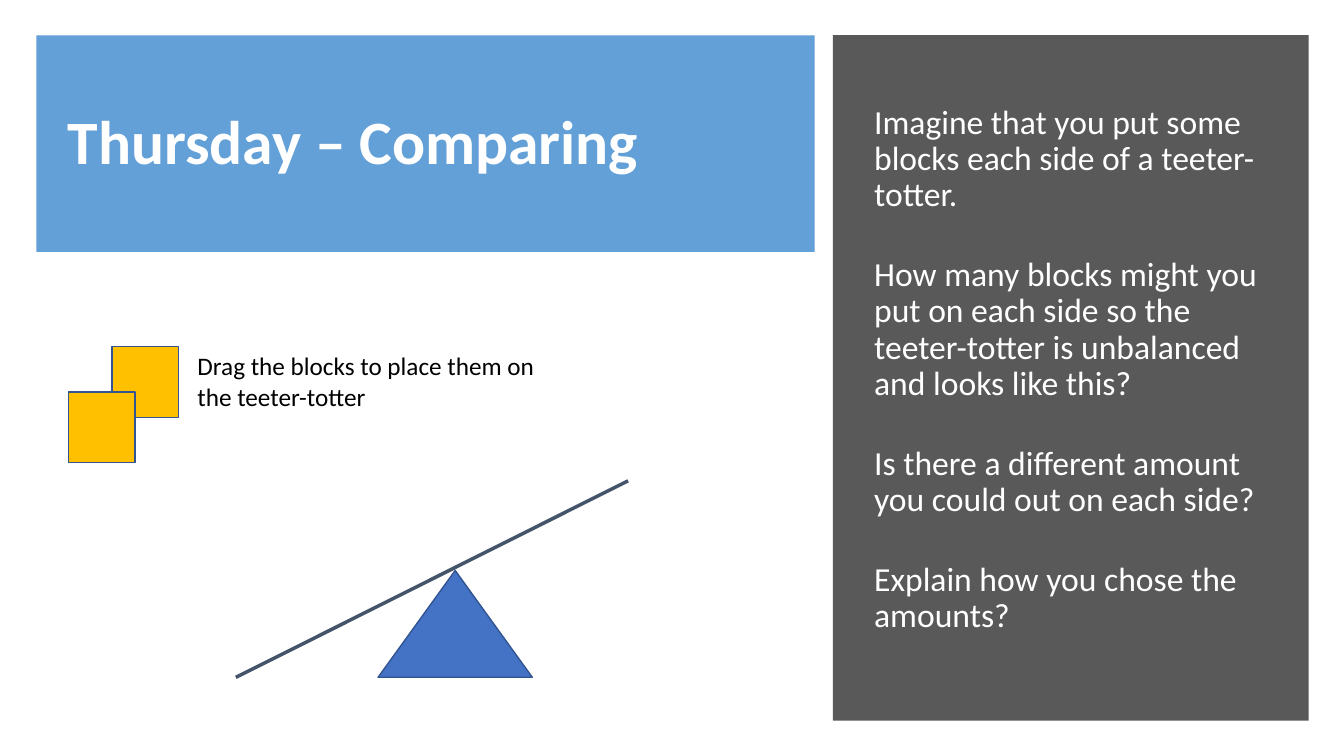
from lxml.etree import SubElement
from pptx import Presentation
from pptx.dml.color import RGBColor
from pptx.enum.shapes import MSO_CONNECTOR, MSO_SHAPE
from pptx.enum.text import MSO_ANCHOR, MSO_AUTO_SIZE, PP_ALIGN
from pptx.oxml.ns import qn
from pptx.util import Inches, Pt

COLOURS = {
    "banner": "5B9BD5",
    "panel": "595959",
    "block": "FFC000",
    "pivot": "4472C4",
    "outline": "325491",
    "beam": "44546A",
    "light": "FFFFFF",
    "dark": "000000",
}
QUESTIONS = [
    "Imagine that you put some blocks each side of a teeter-totter.",
    "How many blocks might you put on each side so the teeter-totter is unbalanced and looks like this?",
    "Is there a different amount you could out on each side?",
    "Explain how you chose the amounts?",
]
INSTRUCTION = "Drag the blocks to place them on the teeter-totter"


def add_filled_shape(kind, box, fill, outline=None):
    shape = slide.shapes.add_shape(kind, *map(Inches, box))
    shape.shadow.inherit = False
    shape.fill.solid()
    shape.fill.fore_color.rgb = RGBColor.from_string(COLOURS[fill])
    if outline:
        shape.line.color.rgb = RGBColor.from_string(COLOURS[outline])
        shape.line.width = Pt(1)
    else:
        shape.line.fill.background()
    return shape


def write_text(shape, box, lines, frame_format, paragraph_format, font_format, colour):
    shape.left, shape.top, shape.width, shape.height = map(Inches, box)
    frame = shape.text_frame
    frame.text = "\n".join(lines)
    for name, value in frame_format.items():
        setattr(frame, name, value)
    for index, paragraph in enumerate(frame.paragraphs):
        properties = paragraph._p.get_or_add_pPr()
        properties.set("marL", "0")
        properties.set("indent", "0")
        SubElement(properties, qn("a:buNone"))
        for name, value in paragraph_format.items():
            setattr(paragraph, name, value)
        if index == 0:
            paragraph.space_before = Pt(0)
        for name, value in font_format.items():
            setattr(paragraph.font, name, value)
        paragraph.font.color.rgb = RGBColor.from_string(COLOURS[colour])


presentation = Presentation()
presentation.slide_width = Inches(13.33)
presentation.slide_height = Inches(7.5)
slide = presentation.slides.add_slide(presentation.slide_layouts[1])
title = slide.shapes.title
body = slide.placeholders[1]

banner = add_filled_shape(MSO_SHAPE.RECTANGLE, (0.36, 0.35, 7.72, 2.15), "banner")
banner_colour = banner.fill._xPr.find(qn("a:solidFill"))[0]
SubElement(banner_colour, qn("a:alpha"), val="95000")
panel = add_filled_shape(MSO_SHAPE.RECTANGLE, (8.26, 0.35, 4.72, 6.8), "panel")
for background in (banner, panel):
    title.element.addprevious(background.element)

centred_frame = {
    "word_wrap": True,
    "auto_size": MSO_AUTO_SIZE.NONE,
    "vertical_anchor": MSO_ANCHOR.MIDDLE,
}
write_text(
    title, (0.57, 0.54, 7.21, 1.78), ["Thursday – Comparing"], centred_frame,
    {"alignment": PP_ALIGN.LEFT, "line_spacing": 0.9},
    {"name": "Calibri", "size": Pt(44), "bold": True}, "light",
)
write_text(
    body, (8.57, 0.54, 4.19, 6.26), QUESTIONS, centred_frame,
    {"alignment": PP_ALIGN.LEFT, "line_spacing": 0.9, "space_before": Pt(31)},
    {"name": "Calibri", "size": Pt(24)}, "light",
)

add_filled_shape(MSO_SHAPE.ISOSCELES_TRIANGLE, (3.75, 5.66, 1.53, 1.06), "pivot", "outline")
beam = slide.shapes.add_connector(
    MSO_CONNECTOR.STRAIGHT, Inches(2.34), Inches(6.72), Inches(6.23), Inches(4.77)
)
beam.line.color.rgb = RGBColor.from_string(COLOURS["beam"])
beam.line.width = Pt(2.5)
SubElement(beam.element.spPr, qn("a:effectLst"))

for left, top in ((1.11, 3.44), (0.68, 3.89)):
    add_filled_shape(MSO_SHAPE.RECTANGLE, (left, top, 0.66, 0.7), "block", "outline")

instruction_box = (1.86, 3.43, 3.88, 0.71)
instruction = slide.shapes.add_textbox(*map(Inches, instruction_box))
write_text(
    instruction, instruction_box, [INSTRUCTION],
    {"word_wrap": True, "auto_size": MSO_AUTO_SIZE.SHAPE_TO_FIT_TEXT},
    {"alignment": PP_ALIGN.LEFT},
    {"name": "Calibri", "size": Pt(18)}, "dark",
)

presentation.save("out.pptx")
